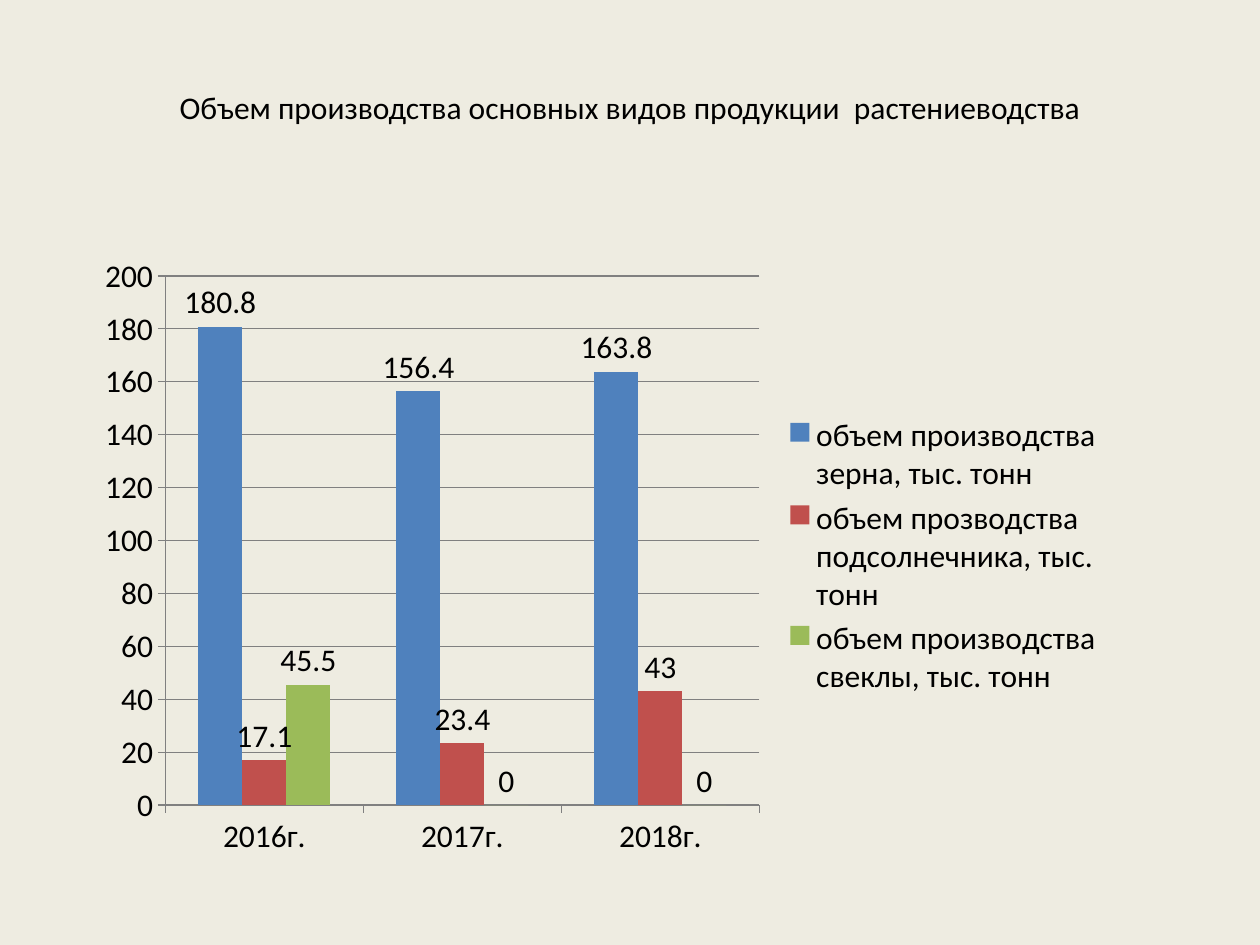
from pptx import Presentation
from pptx.chart.data import CategoryChartData
from pptx.dml.color import RGBColor
from pptx.enum import chart as ch, text
from pptx.util import Inches, Pt

FONT = "Calibri"
YEARS = ["2016г.", "2017г.", "2018г."]
CROPS = [
    ("объем производства зерна, тыс. тонн", (180.8, 156.4, 163.8), "4F81BD"),
    ("объем прозводства подсолнечника, тыс. тонн", (17.1, 23.4, 43), "C0504D"),
    ("объем производства свеклы, тыс. тонн", (45.5, 0, 0), "9BBB59"),
]


def paint(color_format, color):
    color_format.rgb = RGBColor.from_string(color)


def style_font(font):
    font.name = FONT
    font.size = Pt(18)
    font.bold = False
    paint(font.color, "000000")


def style_line(line):
    line.width = Pt(0.75)
    paint(line.color, "808080")


def place_title(slide, left, top, width, height):
    title = slide.shapes.title
    title.left, title.top, title.width, title.height = left, top, width, height
    frame = title.text_frame
    frame.text = "Объем производства основных видов продукции  растениеводства"
    frame.word_wrap = True
    frame.vertical_anchor = text.MSO_ANCHOR.MIDDLE
    # The deep lower margin lifts the heading above the middle of its box
    frame.margin_bottom = Inches(0.75)
    heading = frame.paragraphs[0]
    heading.alignment = text.PP_ALIGN.CENTER
    style_font(heading.font)


def place_harvest_chart(slide, left, top, width, height):
    data = CategoryChartData()
    data.categories = YEARS
    for name, volumes, _ in CROPS:
        data.add_series(name, volumes)
    harvest = slide.shapes.add_chart(
        ch.XL_CHART_TYPE.COLUMN_CLUSTERED, left, top, width, height, data
    ).chart
    harvest.has_title = False
    style_font(harvest.font)

    # Legend
    harvest.has_legend = True
    harvest.legend.position = ch.XL_LEGEND_POSITION.RIGHT
    harvest.legend.include_in_layout = False

    # Axes
    for axis in (harvest.category_axis, harvest.value_axis):
        axis.major_tick_mark = ch.XL_TICK_MARK.OUTSIDE
        style_line(axis.format.line)
    volume_axis = harvest.value_axis
    volume_axis.minimum_scale, volume_axis.maximum_scale = 0, 200
    volume_axis.major_unit = 20
    volume_axis.has_major_gridlines = True
    style_line(volume_axis.major_gridlines.format.line)

    # Columns and their values
    plot = harvest.plots[0]
    plot.gap_width = 150
    plot.overlap = 0
    plot.vary_by_categories = False
    for series, (_, _, color) in zip(plot.series, CROPS):
        series.format.fill.solid()
        paint(series.format.fill.fore_color, color)
        labels = series.data_labels
        labels.show_value = True
        labels.position = ch.XL_LABEL_POSITION.OUTSIDE_END
        style_font(labels.font)


def main():
    deck = Presentation()
    deck.slide_width, deck.slide_height = Inches(10), Inches(7.5)
    slide = deck.slides.add_slide(deck.slide_layouts[5])
    slide.background.fill.solid()
    paint(slide.background.fill.fore_color, "EEECE1")
    place_title(slide, Inches(0.5), Inches(0.3), Inches(9), Inches(1.8))
    place_harvest_chart(slide, Inches(0.67), Inches(1.94), Inches(8.19), Inches(4.95))
    deck.save("out.pptx")


if __name__ == "__main__":
    main()
